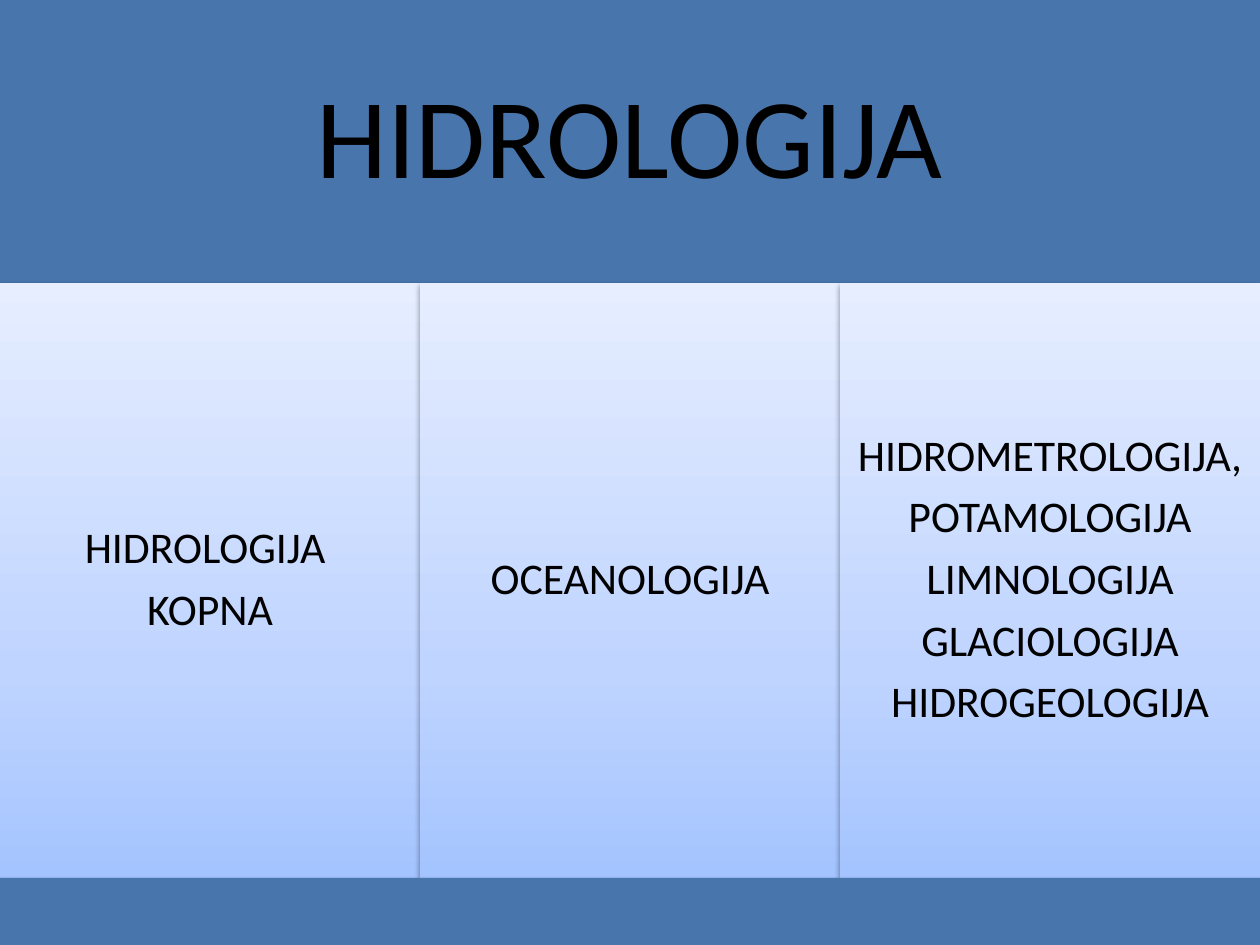
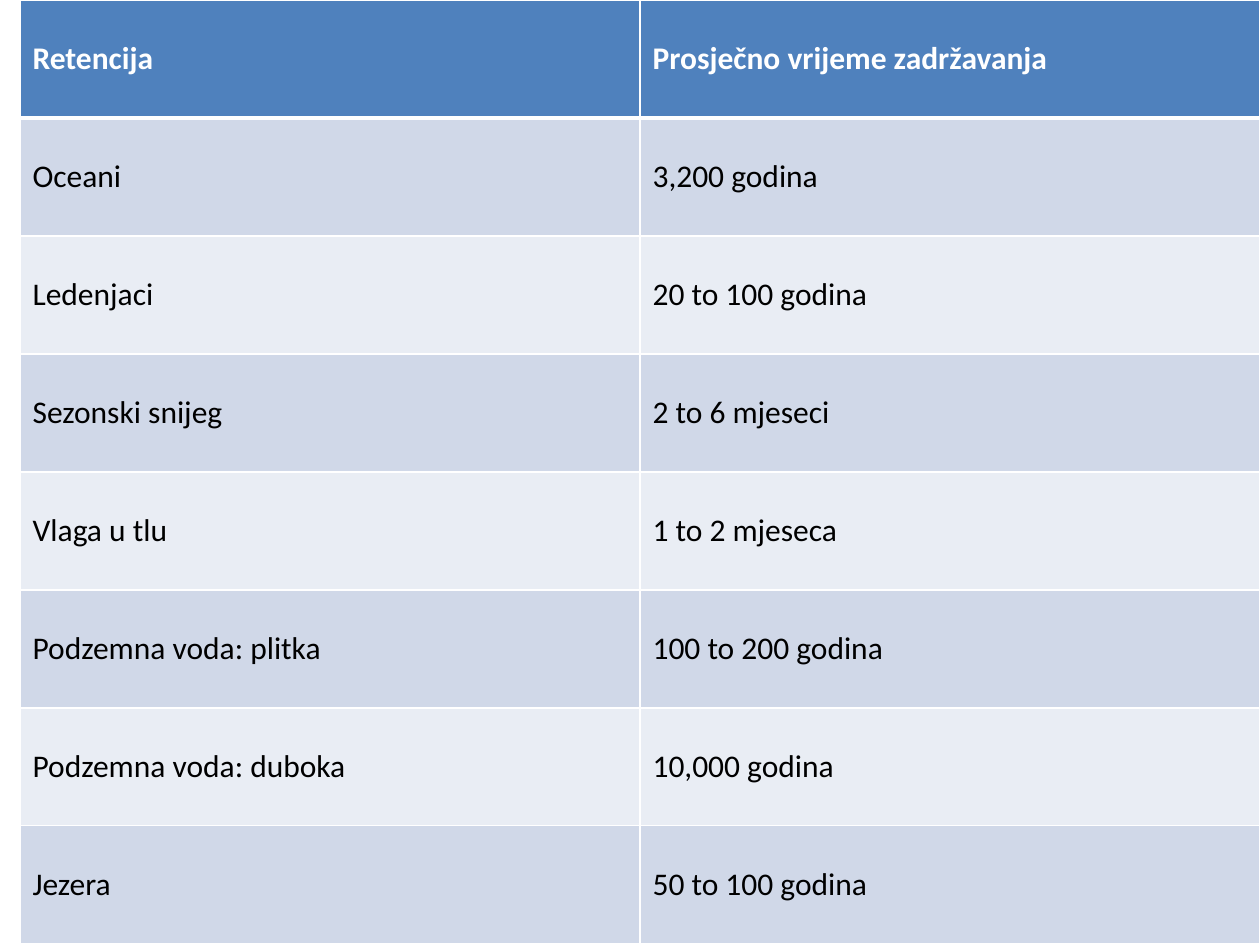
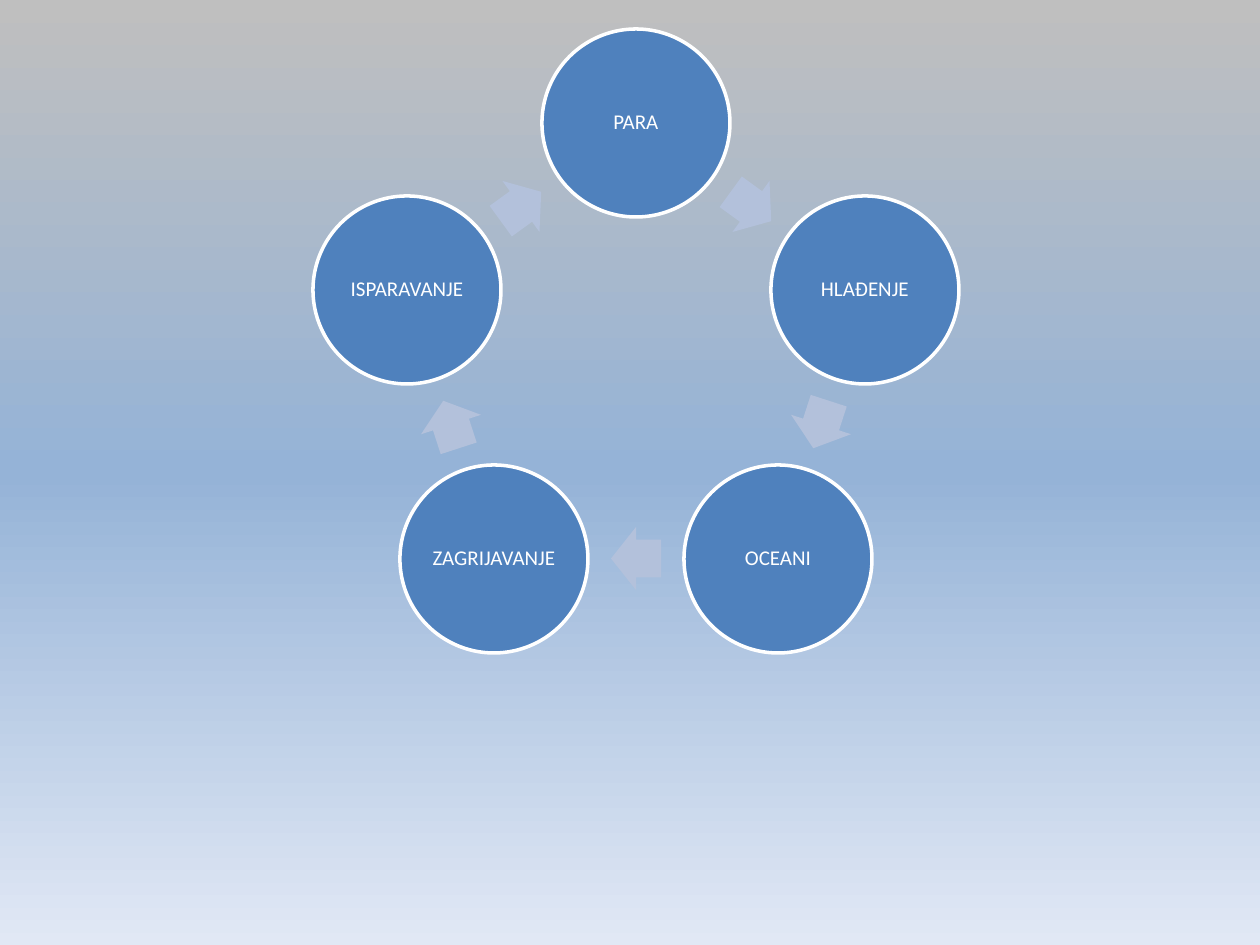
from math import cos, pi, radians, sin

from lxml.etree import SubElement
from pptx import Presentation
from pptx.dml.color import RGBColor
from pptx.enum.shapes import MSO_SHAPE
from pptx.enum.text import MSO_ANCHOR, PP_ALIGN
from pptx.oxml.ns import qn
from pptx.util import Pt

SLIDE_W, SLIDE_H = 1260, 945
FONT = "Calibri"
BLACK, WHITE = "000000", "FFFFFF"
BAND, ACCENT, ARROW = "4875AC", "4F81BD", "B3C1DB"
ROW_TINTS = ("E9EDF4", "D0D8E8")
PANEL_GRADIENT = [(0, "A4C4FF"), (35, "BFD4FF"), (100, "E6EEFF")]
SKY_GRADIENT = [(0, "BFBFBF"), (50, "95B3D7"), (100, "E1E8F5")]

FIELD = "HIDROLOGIJA"
BRANCHES = [
    ["HIDROLOGIJA ", "KOPNA"],
    ["OCEANOLOGIJA"],
    ["HIDROMETROLOGIJA,", "POTAMOLOGIJA", "LIMNOLOGIJA", "GLACIOLOGIJA",
     "HIDROGEOLOGIJA"],
]
RETENTION = [
    ("Retencija", "Prosječno vrijeme zadržavanja"),
    ("Oceani", "3,200 godina"),
    ("Ledenjaci", "20 to 100 godina"),
    ("Sezonski snijeg", "2 to 6 mjeseci"),
    ("Vlaga u tlu", "1 to 2 mjeseca"),
    ("Podzemna voda: plitka", "100 to 200 godina"),
    ("Podzemna voda: duboka", "10,000 godina"),
    ("Jezera", "50 to 100 godina"),
]
CYCLE = ["PARA", "HLAĐENJE", "OCEANI", "ZAGRIJAVANJE", "ISPARAVANJE"]


def px(length):
    return round(length * 914400 / 126)


def rgb(color):
    return RGBColor.from_string(color)


def fill_gradient(owner, fill, stops, angle):
    """Give the fill of a shape or background any number of stops."""
    fill.gradient()
    gradient = next(owner._element.iter(qn("a:gradFill")))
    stop_list = gradient.find(qn("a:gsLst"))
    for old_stop in list(stop_list):
        stop_list.remove(old_stop)
    for percent, color in stops:
        stop = SubElement(stop_list, qn("a:gs"), pos=str(percent * 1000))
        SubElement(stop, qn("a:srgbClr"), val=color)
    gradient.find(qn("a:lin")).set("ang", str(angle * 60000))


def add_block(slide, preset, left, top, width, height, color=None):
    block = slide.shapes.add_shape(preset, px(left), px(top), px(width), px(height))
    block.shadow.inherit = False
    block.line.fill.background()
    if color:
        block.fill.solid()
        block.fill.fore_color.rgb = rgb(color)
    return block


def cast_shadow(block):
    effects = block._element.spPr.find(qn("a:effectLst"))
    shadow = SubElement(effects, qn("a:outerShdw"), blurRad=str(Pt(3.1)),
                        dist=str(Pt(1.6)), dir="5400000", rotWithShape="0")
    tone = SubElement(shadow, qn("a:srgbClr"), val=BLACK)
    SubElement(tone, qn("a:alpha"), val="38000")


def style_font(paragraph, size, color, bold=False):
    for run in paragraph.runs:
        run.font.name = FONT
        run.font.size = Pt(size)
        run.font.bold = bold
        run.font.color.rgb = rgb(color)


def write(block, lines, size, color, inset):
    frame = block.text_frame
    frame.text = "\n".join(lines)
    frame.word_wrap = True
    frame.vertical_anchor = MSO_ANCHOR.MIDDLE
    frame.margin_left = frame.margin_right = px(inset)
    frame.margin_top = frame.margin_bottom = px(inset)
    for paragraph in frame.paragraphs:
        paragraph.alignment = PP_ALIGN.CENTER
        paragraph.line_spacing = 0.9
        paragraph.space_after = Pt(0.33 * size)
        style_font(paragraph, size, color)


def add_borders(cell, bottom_width):
    properties = cell._tc.get_or_add_tcPr()
    for side, width in (("L", 1), ("R", 1), ("T", 1), ("B", bottom_width)):
        border = SubElement(properties, qn("a:ln" + side), w=str(Pt(width)))
        paint = SubElement(border, qn("a:solidFill"))
        SubElement(paint, qn("a:srgbClr"), val=WHITE)


def build_branches(slide):
    header_h, panels_bottom = 283, 878
    panel_w = SLIDE_W // len(BRANCHES)
    header = add_block(slide, MSO_SHAPE.RECTANGLE, 0, 0, SLIDE_W, header_h, BAND)
    cast_shadow(header)
    write(header, [FIELD], 65, BLACK, 34)
    for column, branch in enumerate(BRANCHES):
        panel = add_block(slide, MSO_SHAPE.RECTANGLE, column * panel_w, header_h,
                          panel_w, panels_bottom - header_h)
        fill_gradient(panel, panel.fill, PANEL_GRADIENT, 270)
        cast_shadow(panel)
        write(panel, branch, 25, BLACK, 13)
    footer = add_block(slide, MSO_SHAPE.RECTANGLE, 0, panels_bottom, SLIDE_W,
                       SLIDE_H - panels_bottom, BAND)
    cast_shadow(footer)


def build_retention(slide):
    left = 20
    columns = len(RETENTION[0])
    table = slide.shapes.add_table(len(RETENTION), columns, px(left), 0,
                                   px(SLIDE_W - left), px(SLIDE_H)).table
    for column in table.columns:
        column.width = px((SLIDE_W - left) // columns)
    for r, entries in enumerate(RETENTION):
        is_header = r == 0
        table.rows[r].height = px(SLIDE_H // len(RETENTION))
        for c, entry in enumerate(entries):
            cell = table.cell(r, c)
            add_borders(cell, 3 if is_header else 1)
            cell.fill.solid()
            cell.fill.fore_color.rgb = rgb(ACCENT if is_header else ROW_TINTS[r % 2])
            cell.vertical_anchor = MSO_ANCHOR.MIDDLE
            cell.text_frame.text = entry
            style_font(cell.text_frame.paragraphs[0], 18,
                       WHITE if is_header else BLACK, is_header)


def build_cycle(slide):
    fill_gradient(slide.background, slide.background.fill, SKY_GRADIENT, 90)
    center_x, center_y, radius = 636, 364, 241
    stage_size, arrow_w, arrow_h = 188, 50, 63
    step = 360 / len(CYCLE)
    arrow_radius = radius * cos(pi / len(CYCLE))

    def add_on_ring(preset, angle, distance, width, height, color):
        """Centre a block on the ring; the angle runs clockwise from the top."""
        x = center_x + distance * sin(radians(angle))
        y = center_y - distance * cos(radians(angle))
        return add_block(slide, preset, round(x - width / 2), round(y - height / 2),
                         width, height, color)

    for i, stage_name in enumerate(CYCLE):
        stage = add_on_ring(MSO_SHAPE.OVAL, i * step, radius,
                            stage_size, stage_size, ACCENT)
        stage.line.color.rgb = rgb(WHITE)
        stage.line.width = Pt(2)
        write(stage, [stage_name], 12, WHITE, 2)
        arrow_angle = (i + 0.5) * step
        arrow = add_on_ring(MSO_SHAPE.RIGHT_ARROW, arrow_angle, arrow_radius,
                            arrow_w, arrow_h, ARROW)
        arrow.rotation = arrow_angle
        arrow.adjustments[0] = 0.6
        arrow.adjustments[1] = 0.5


def main():
    deck = Presentation()
    deck.slide_width, deck.slide_height = px(SLIDE_W), px(SLIDE_H)
    for build in (build_branches, build_retention, build_cycle):
        build(deck.slides.add_slide(deck.slide_layouts[6]))
    deck.save("out.pptx")


if __name__ == "__main__":
    main()
